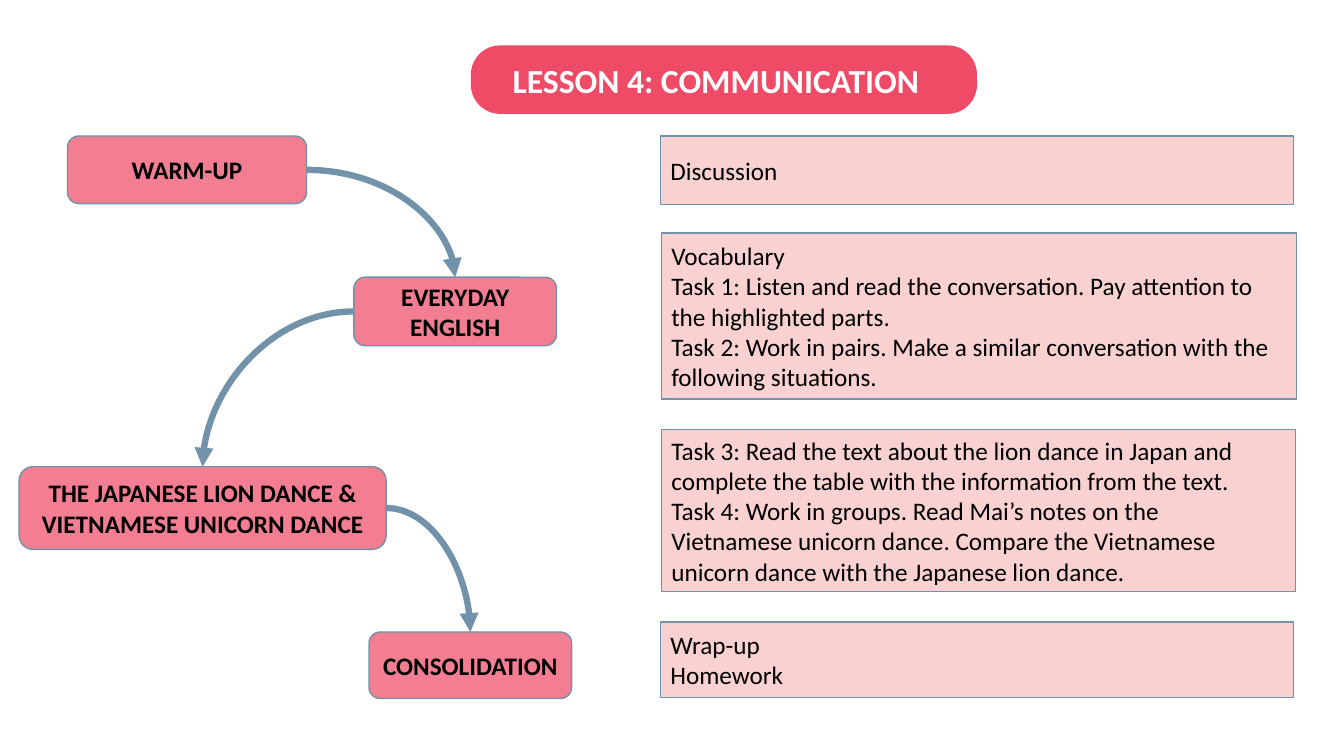
import pptx
import pptx.dml.color
import pptx.enum.shapes
import pptx.enum.text
import pptx.oxml.ns
import pptx.util
from lxml import etree

Inches = pptx.util.Inches
Pt = pptx.util.Pt
RGBColor = pptx.dml.color.RGBColor
Shape = pptx.enum.shapes.MSO_SHAPE
Align = pptx.enum.text.PP_ALIGN
qn = pptx.oxml.ns.qn

RED = RGBColor(0xEF, 0x4B, 0x66)
ROSE = RGBColor(0xF3, 0x7D, 0x91)
PINK = RGBColor(0xF7, 0xA5, 0xA5)
STEEL = RGBColor(0x71, 0x92, 0xA9)
BLACK = RGBColor(0, 0, 0)
WHITE = RGBColor(0xFF, 0xFF, 0xFF)

TOP, LEFT, RIGHT = 0, 1, 3  # connection sites of a rounded rectangle

ACTIVITIES = [
    ((6.55, 1.35, 6.28, 0.68), ["Discussion"]),
    ((6.56, 2.31, 6.3, 1.65), [
        "Vocabulary",
        "Task 1: Listen and read the conversation. Pay attention to the highlighted parts.",
        "Task 2: Work in pairs. Make a similar conversation with the following situations.",
    ]),
    ((6.56, 4.26, 6.29, 1.61), [
        "Task 3: Read the text about the lion dance in Japan and complete the table "
        "with the information from the text.",
        "Task 4: Work in groups. Read Mai’s notes on the Vietnamese unicorn dance. "
        "Compare the Vietnamese unicorn dance with the Japanese lion dance.",
    ]),
    ((6.55, 6.17, 6.28, 0.75), ["Wrap-up", "Homework"]),
]

STAGES = [
    ((0.67, 1.35, 2.37, 0.67), "WARM-UP"),
    ((3.51, 2.75, 2.01, 0.68), "EVERYDAY ENGLISH"),
    ((0.19, 4.63, 3.64, 0.82), "THE JAPANESE LION DANCE & VIETNAMESE UNICORN DANCE"),
    ((3.66, 6.27, 2.01, 0.66), "CONSOLIDATION"),
]


class LessonPage:
    font_name = "Calibri"

    def __init__(self, page):
        self.page = page

    def block(self, kind, place, lines, fill, color=BLACK, size=18, bold=False,
              align=Align.LEFT, outline=STEEL):
        """Add a filled shape with one paragraph for each line of text."""
        box = self.page.shapes.add_shape(kind, *map(Inches, place))
        box.shadow.inherit = False
        box.fill.solid()
        box.fill.fore_color.rgb = fill
        if outline is None:
            box.line.fill.background()
        else:
            box.line.color.rgb = outline
            box.line.width = Pt(1)
        frame = box.text_frame
        frame.word_wrap = True
        frame.vertical_anchor = pptx.enum.text.MSO_ANCHOR.MIDDLE
        frame.text = "\n".join(lines)
        for para in frame.paragraphs:
            para.alignment = align
            for span in para.runs:
                span.font.name = self.font_name
                span.font.size = Pt(size)
                span.font.bold = bold
                span.font.color.rgb = color
        return box

    def title(self, place, text):
        box = self.block(Shape.ROUNDED_RECTANGLE, place, [text], RED, WHITE,
                         size=24, bold=True, outline=None)
        box.adjustments[0] = 0.427
        box.text_frame.margin_left = Inches(0.33)

    def activity(self, place, lines):
        box = self.block(Shape.RECTANGLE, place, lines, PINK)
        tint = box.element.spPr.find(qn("a:solidFill"))[0]
        etree.SubElement(tint, qn("a:alpha")).set("val", "50000")

    def stage(self, place, text):
        return self.block(Shape.ROUNDED_RECTANGLE, place, [text], ROSE,
                          bold=True, align=Align.CENTER)

    def arrow(self, start, side, end):
        """Curve from one side of a stage to the top of the next."""
        curve = self.page.shapes.add_connector(
            pptx.enum.shapes.MSO_CONNECTOR.CURVE, 0, 0, 0, 0)
        curve.begin_connect(start, side)
        curve.end_connect(end, TOP)
        curve.line.color.rgb = STEEL
        curve.line.width = Pt(4.5)
        properties = curve.element.spPr
        properties.find(qn("a:prstGeom")).set("prst", "curvedConnector2")
        head = etree.SubElement(properties.find(qn("a:ln")), qn("a:tailEnd"))
        head.set("type", "triangle")
        etree.SubElement(properties, qn("a:effectLst"))


def main():
    deck = pptx.Presentation()
    deck.slide_width = Inches(13.33)
    deck.slide_height = Inches(7.5)
    lesson = LessonPage(deck.slides.add_slide(deck.slide_layouts[6]))

    lesson.title((4.67, 0.45, 5.02, 0.68), "LESSON 4: COMMUNICATION")
    for place, lines in ACTIVITIES:
        lesson.activity(place, lines)
    stages = [lesson.stage(place, text) for place, text in STAGES]
    for start, side, end in zip(stages, (RIGHT, LEFT, RIGHT), stages[1:]):
        lesson.arrow(start, side, end)

    deck.save("out.pptx")


if __name__ == "__main__":
    main()
